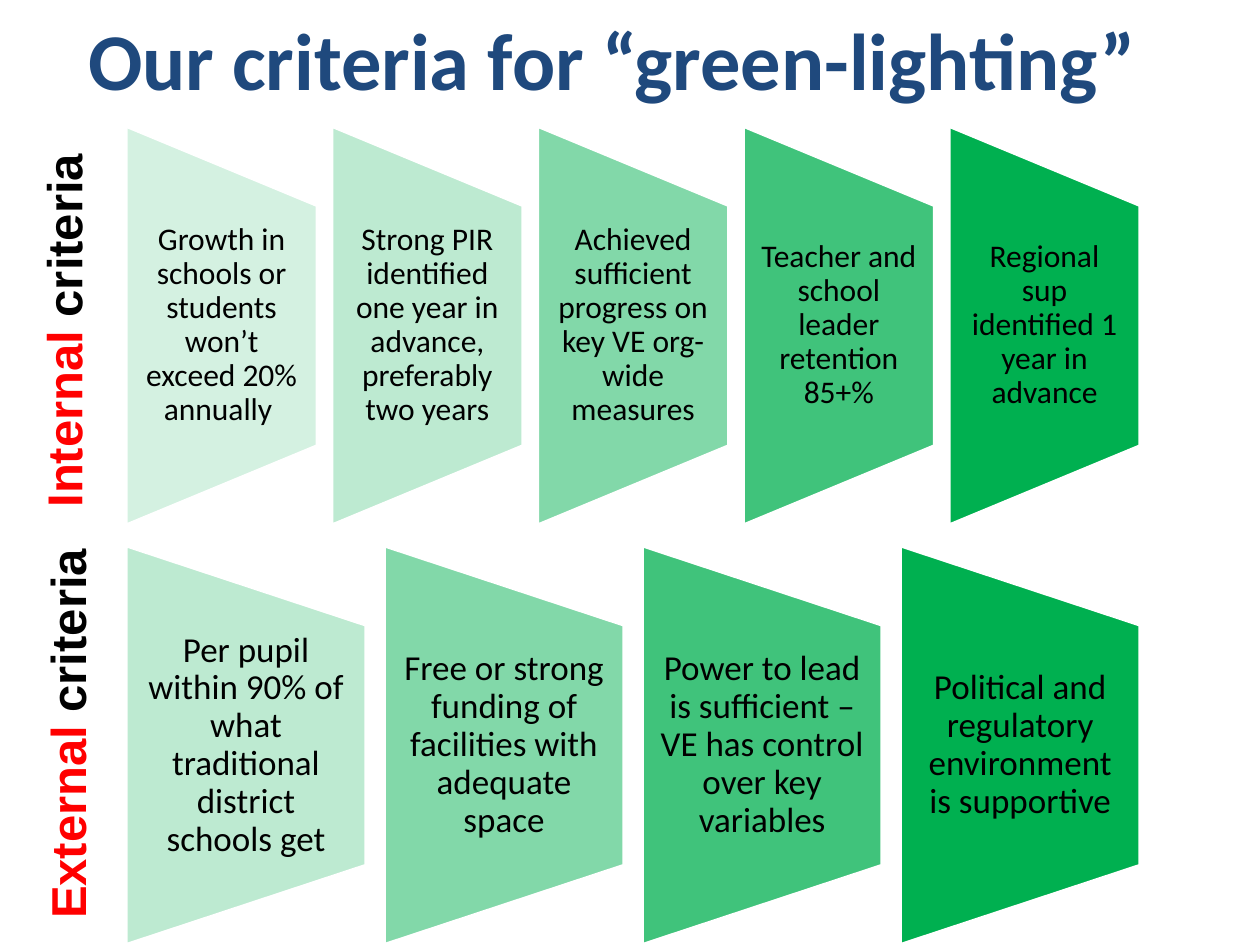
from lxml import etree
from pptx import Presentation
from pptx import util as u
from pptx.dml.color import RGBColor
from pptx.enum import text
from pptx.oxml import ns

NAVY = RGBColor(0x1F, 0x49, 0x7D)
GREEN = RGBColor(0x00, 0xB0, 0x50)
RED = RGBColor(0xFF, 0x00, 0x00)
BLACK = RGBColor(0x00, 0x00, 0x00)
WHITE = RGBColor(0xFF, 0xFF, 0xFF)

ROW_LEFT, ROW_WIDTH, PANEL_HEIGHT = 1, 8.05, 3.17
GAP_RATIO = 0.075
SLANT = 0.63
OPACITIES = [17, 26, 49, 75, 100]

INTERNAL = [
    "Growth in schools or students won’t exceed 20% annually ",
    "Strong PIR identified one year in advance, preferably two years",
    "Achieved sufficient progress on key VE org-wide measures",
    "Teacher and school leader retention 85+%",
    "Regional sup identified 1 year in advance",
]
EXTERNAL = [
    "Per pupil within 90% of what traditional district schools get",
    "Free or strong funding of facilities with adequate space",
    "Power to lead is sufficient – VE has control over key variables",
    "Political and regulatory environment is supportive",
]


def place(shape, left, top, width, height):
    shape.left, shape.top = u.Inches(left), u.Inches(top)
    shape.width, shape.height = u.Inches(width), u.Inches(height)


def style(para, font, size, color=None, bold=False):
    para.alignment = text.PP_ALIGN.CENTER
    para.font.name, para.font.size, para.font.bold = font, u.Pt(size), bold
    if color is not None:
        para.font.color.rgb = color


def add_title(page, words):
    title = page.shapes.title
    place(title, -0.08, 0.17, 9.87, 0.58)
    frame = title.text_frame
    frame.text = words
    frame.auto_size = text.MSO_AUTO_SIZE.NONE
    frame.vertical_anchor = text.MSO_ANCHOR.MIDDLE
    style(frame.paragraphs[0], "Calibri", 46, NAVY, True)


def set_opacity(shape, percent):
    color = shape.fill._xPr.find(".//" + ns.qn("a:srgbClr"))
    etree.SubElement(color, ns.qn("a:alpha")).set("val", str(percent * 1000))


def add_panel(page, left, top, width, words, size, inset, opacity):
    right, bottom = left + width, top + PANEL_HEIGHT
    corners = [(left, top), (right, top + SLANT), (right, bottom - SLANT)]
    builder = page.shapes.build_freeform(u.Inches(left), u.Inches(bottom))
    builder.add_line_segments([(u.Inches(x), u.Inches(y)) for x, y in corners])
    panel = builder.convert_to_shape()
    panel.shadow.inherit = False
    panel.fill.solid()
    panel.fill.fore_color.rgb = GREEN
    if opacity < 100:
        set_opacity(panel, opacity)
    panel.line.color.rgb = WHITE
    panel.line.width = u.Pt(2)
    frame = panel.text_frame
    frame.text = words
    frame.word_wrap = True
    frame.vertical_anchor = text.MSO_ANCHOR.MIDDLE
    frame.margin_left = frame.margin_right = u.Inches(inset)
    frame.margin_top = frame.margin_bottom = u.Inches(SLANT)
    para = frame.paragraphs[0]
    para.line_spacing = 0.9
    style(para, "Calibri", size, BLACK)


def add_row(page, top, criteria, size, inset):
    count = len(criteria)
    width = ROW_WIDTH / (count + GAP_RATIO * (count - 1))
    step = width * (1 + GAP_RATIO)
    for index, (words, opacity) in enumerate(zip(criteria, OPACITIES[-count:])):
        add_panel(page, ROW_LEFT + index * step, top, width, words, size, inset, opacity)


def add_row_label(page, left, top, width, kind):
    box = page.shapes.add_textbox(0, 0, 0, 0)
    place(box, left, top, width, 0.57)
    box.rotation = 270
    frame = box.text_frame
    frame.word_wrap = True
    frame.auto_size = text.MSO_AUTO_SIZE.SHAPE_TO_FIT_TEXT
    para = frame.paragraphs[0]
    style(para, "Arial", 28, bold=True)
    for words, color in [(kind, RED), (" criteria", BLACK)]:
        span = para.add_run()
        span.text = words
        span.font.color.rgb = color


def main():
    deck = Presentation()
    deck.slide_width, deck.slide_height = u.Inches(10), u.Inches(7.5)
    page = deck.slides.add_slide(deck.slide_layouts[5])
    add_title(page, "Our criteria for “green-lighting”")
    add_row(page, 1, INTERNAL, 18, 0.12)
    add_row(page, 4.33, EXTERNAL, 20, 0.14)
    add_row_label(page, -1.04, 2.34, 3.08, "Internal")
    add_row_label(page, -1.09, 5.54, 3.24, "External")
    deck.save("out.pptx")


if __name__ == "__main__":
    main()
